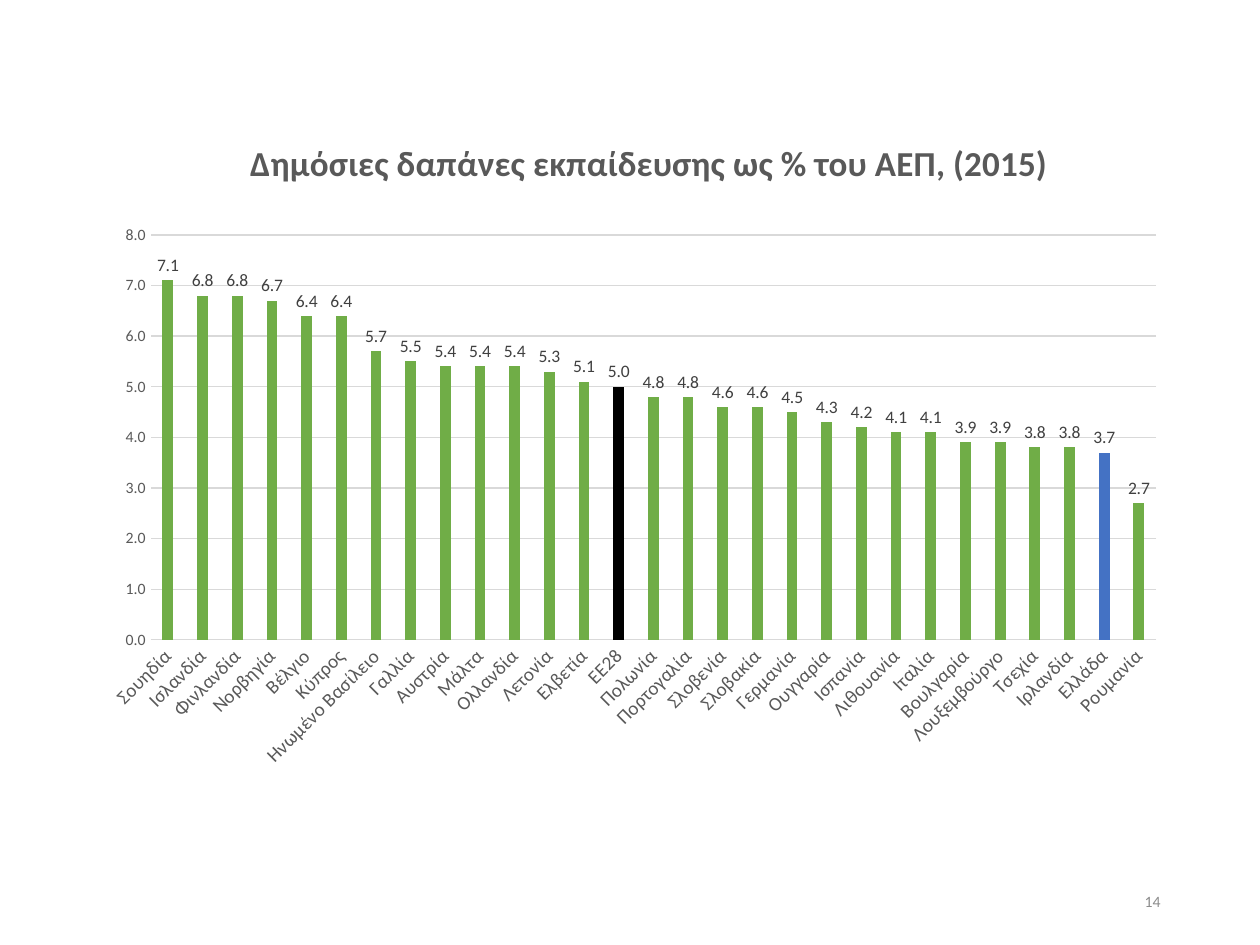
from lxml import etree
from pptx import Presentation
from pptx.chart.data import CategoryChartData
from pptx.dml.color import RGBColor
from pptx.enum.chart import XL_CHART_TYPE, XL_LABEL_POSITION, XL_TICK_MARK
from pptx.enum.text import MSO_ANCHOR, PP_ALIGN
from pptx.util import Inches, Pt

COLUMNS = XL_CHART_TYPE.COLUMN_CLUSTERED
OUTSIDE_END = XL_LABEL_POSITION.OUTSIDE_END
NO_TICK = XL_TICK_MARK.NONE
MIDDLE = MSO_ANCHOR.MIDDLE
RIGHT = PP_ALIGN.RIGHT

FONT = "Calibri"
CHART_NS = "http://schemas.openxmlformats.org/drawingml/2006/chart"
COLORS = {
    "country": "70AD47",
    "average": "000000",
    "greece": "4472C4",
    "grid": "D9D9D9",
    "axis_text": "595959",
    "label": "404040",
    "page_number": "8C8C8C",
}
HIGHLIGHTS = {"ΕΕ28": "average", "Ελλάδα": "greece"}
SPENDING = {
    "Σουηδία": 7.1, "Ισλανδία": 6.8, "Φινλανδία": 6.8, "Νορβηγία": 6.7,
    "Βέλγιο": 6.4, "Κύπρος": 6.4, "Ηνωμένο Βασίλειο": 5.7, "Γαλλία": 5.5,
    "Αυστρία": 5.4, "Μάλτα": 5.4, "Ολλανδία": 5.4, "Λετονία": 5.3,
    "Ελβετία": 5.1, "ΕΕ28": 5.0, "Πολωνία": 4.8, "Πορτογαλία": 4.8,
    "Σλοβενία": 4.6, "Σλοβακία": 4.6, "Γερμανία": 4.5, "Ουγγαρία": 4.3,
    "Ισπανία": 4.2, "Λιθουανία": 4.1, "Ιταλία": 4.1, "Βουλγαρία": 3.9,
    "Λουξεμβούργο": 3.9, "Τσεχία": 3.8, "Ιρλανδία": 3.8, "Ελλάδα": 3.7,
    "Ρουμανία": 2.7,
}


def color(name):
    return RGBColor.from_string(COLORS[name])


def style_font(font, size, color_name, bold=False):
    font.name = FONT
    font.size = Pt(size)
    font.bold = bold
    font.color.rgb = color(color_name)


def style_line(line):
    line.color.rgb = color("grid")
    line.width = Pt(0.75)


def fill_solid(shape_format, color_name):
    shape_format.fill.solid()
    shape_format.fill.fore_color.rgb = color(color_name)


def set_layout(parent, index, settings):
    """Place a chart part by fractions of the chart area."""
    for old in parent.findall(f"{{{CHART_NS}}}layout"):
        parent.remove(old)
    layout = etree.Element(f"{{{CHART_NS}}}layout")
    manual = etree.SubElement(layout, f"{{{CHART_NS}}}manualLayout")
    for name, value in settings.items():
        etree.SubElement(manual, f"{{{CHART_NS}}}{name}").set("val", str(value))
    parent.insert(index, layout)


def add_title(chart):
    chart.has_title = True
    frame = chart.chart_title.text_frame
    frame.text = "Δημόσιες δαπάνες εκπαίδευσης ως % του ΑΕΠ, (2015)"
    style_font(frame.paragraphs[0].runs[0].font, 20, "axis_text", bold=True)
    title = chart.element.xpath("c:chart/c:title")[0]
    set_layout(title, 1, {"xMode": "edge", "yMode": "edge", "x": 0.13, "y": 0.04})


def style_axes(chart):
    for axis, size in ((chart.category_axis, 11), (chart.value_axis, 9)):
        axis.major_tick_mark = axis.minor_tick_mark = NO_TICK
        style_font(axis.tick_labels.font, size, "axis_text")
    style_line(chart.category_axis.format.line)

    values = chart.value_axis
    values.minimum_scale, values.maximum_scale, values.major_unit = 0, 8, 1
    values.format.line.fill.background()
    values.has_major_gridlines = True
    style_line(values.major_gridlines.format.line)
    values.tick_labels.number_format = "0.0"
    values.tick_labels.number_format_is_linked = False

    # Slanted country names
    body = chart.element.xpath("//c:catAx/c:txPr/a:bodyPr")[0]
    body.set("rot", "-2700000")
    body.set("vert", "horz")


def style_columns(chart):
    plot = chart.plots[0]
    plot.gap_width = 219
    plot.overlap = -27
    plot.vary_by_categories = False
    series = plot.series[0]
    series.invert_if_negative = False
    fill_solid(series.format, "country")
    for index, country in enumerate(SPENDING):
        if country in HIGHLIGHTS:
            fill_solid(series.points[index].format, HIGHLIGHTS[country])

    plot.has_data_labels = True
    labels = plot.data_labels
    labels.show_value = True
    labels.position = OUTSIDE_END
    labels.number_format = "0.0"
    labels.number_format_is_linked = False
    style_font(labels.font, 10, "label")


def add_spending_chart(page):
    data = CategoryChartData(number_format="0.0")
    data.categories = list(SPENDING)
    data.add_series("Series 1", list(SPENDING.values()))
    chart = page.shapes.add_chart(
        COLUMNS, Inches(0.83), Inches(0.83), Inches(8.5), Inches(5.42), data
    ).chart
    chart.has_legend = False
    chart.font.name = FONT
    chart.font.size = Pt(10)
    add_title(chart)
    style_axes(chart)
    style_columns(chart)
    plot_area = chart.element.xpath("c:chart/c:plotArea")[0]
    set_layout(plot_area, 0, {
        "layoutTarget": "inner", "xMode": "edge", "yMode": "edge",
        "x": 0.043, "y": 0.191, "w": 0.939, "h": 0.593,
    })


def add_page_number(page):
    box = page.shapes.add_textbox(Inches(7.06), Inches(6.95), Inches(2.25), Inches(0.4))
    frame = box.text_frame
    frame.word_wrap = True
    frame.vertical_anchor = MIDDLE
    frame.text = "14"
    para = frame.paragraphs[0]
    para.alignment = RIGHT
    style_font(para.runs[0].font, 9, "page_number")


def main():
    deck = Presentation()
    deck.slide_width, deck.slide_height = Inches(10), Inches(7.5)
    page = deck.slides.add_slide(deck.slide_layouts[6])
    add_page_number(page)
    add_spending_chart(page)
    deck.save("out.pptx")


if __name__ == "__main__":
    main()
